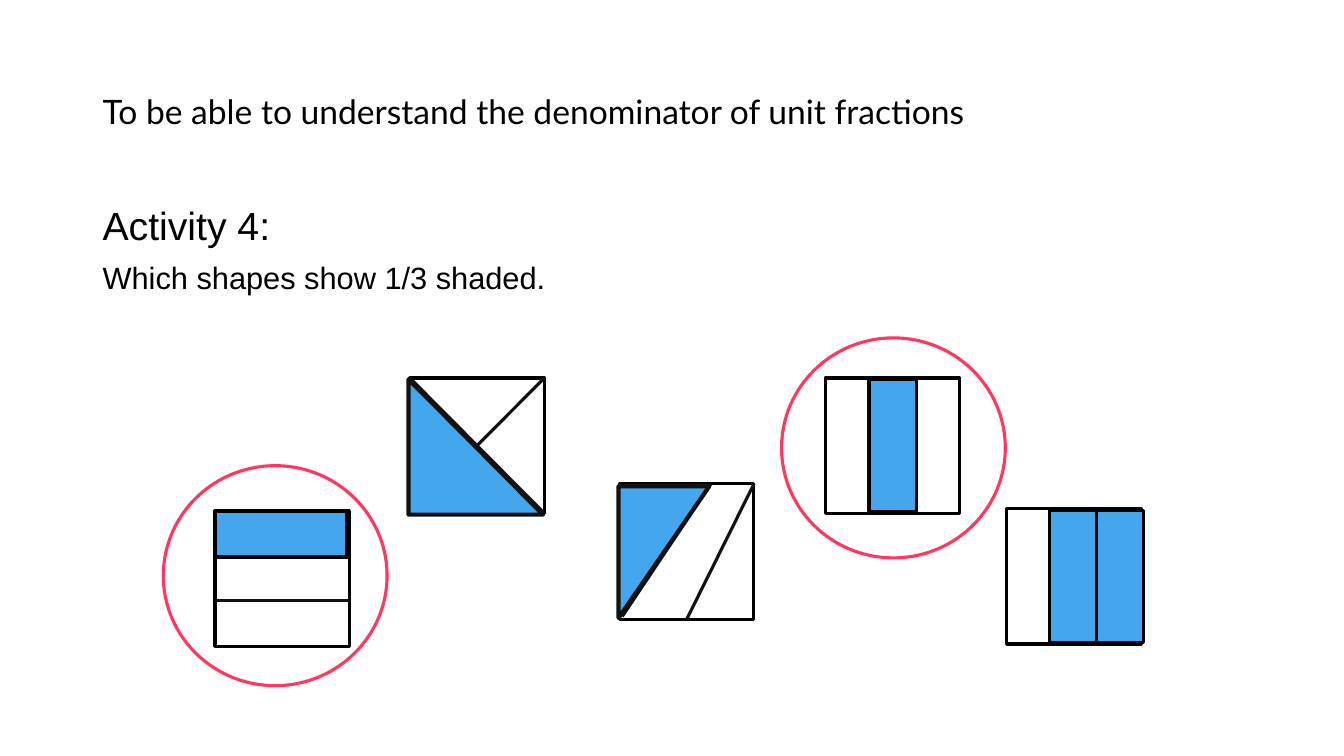
from lxml import etree
from pptx import Presentation
from pptx import util as u
from pptx.dml.color import RGBColor
from pptx.enum import shapes as s, text as t
from pptx.oxml.ns import qn

COLORS = {"black": "000000", "divider": "121212", "white": "FFFFFF",
          "shaded": "44A6ED", "answer": "FF3860"}

deck = Presentation()
deck.slide_width, deck.slide_height = u.Inches(13.33), u.Inches(7.5)
slide = deck.slides.add_slide(deck.slide_layouts[6])
COL, ROW = deck.slide_width / 100, deck.slide_height / 100  # one percent of the slide
SIDE_W, SIDE_H = 10 * COL, 17.9 * ROW                       # every square


def add_outline(kind, x, y, w, h, fill, line, weight):
    """Add an outlined shape; lengths in EMU, fill None for hollow."""
    outline = slide.shapes.add_shape(kind, int(x), int(y), int(w), int(h))
    outline.shadow.inherit = False
    if fill:
        outline.fill.solid()
        outline.fill.fore_color.rgb = RGBColor.from_string(COLORS[fill])
    else:
        outline.fill.background()
    outline.line.color.rgb = RGBColor.from_string(COLORS[line])
    outline.line.width = u.Pt(weight)
    return outline


def add_wording(x, y, w, h, anchor, lines):
    """Add a text box in percent of the slide; lines are (wording, size, font)."""
    box = slide.shapes.add_textbox(int(x * COL), int(y * ROW), int(w * COL), int(h * ROW))
    frame = box.text_frame
    frame.word_wrap = True
    frame.vertical_anchor = anchor
    frame.text = "\n".join(wording for wording, _, _ in lines)
    for i, (paragraph, (_, size, font)) in enumerate(zip(frame.paragraphs, lines)):
        paragraph.line_spacing = 0.9
        paragraph.space_before = u.Pt(10 if i else 0)
        face = paragraph.runs[0].font
        face.size, face.name = u.Pt(size), font
        face.color.rgb = RGBColor.from_string(COLORS["black"])


# Learning objective and question
add_wording(6.9, 5.33, 72, 19.33, t.MSO_ANCHOR.MIDDLE,
            [("To be able to understand the denominator of unit fractions", 24, "Lato")])
add_wording(6.9, 26.67, 86.3, 63.5, t.MSO_ANCHOR.TOP,
            [("Activity 4:", 28, "Arial"), ("Which shapes show 1/3 shaded.", 22, "Arial")])

# Squares: corner in percent of the slide; dividers (x1, y1, x2, y2) and
# shaded parts (kind, x, y, w, h, rotation) in shares of the square
STRIP, TRIANGLE = s.MSO_SHAPE.RECTANGLE, s.MSO_SHAPE.RIGHT_TRIANGLE
upright_thirds = [(0.32, 0, 0.32, 1), (0.67, 0, 0.67, 1)]
level_thirds = [(0, 0.34, 1, 0.34), (0, 0.66, 1, 0.66)]
left_middle = (STRIP, 0.33, 0.01, 0.35, 0.98, 0)
squares = [
    (61.4, 50, upright_thirds, [left_middle]),
    (30.5, 50, [(0, 0, 1, 1), (1, 0, 0.5, 0.5)], [(TRIANGLE, -0.01, 0.01, 1, 1, 0)]),
    (46.1, 64, [(1, 0, 0.5, 1), (0.68, 0, 0.02, 0.98)],
     [(TRIANGLE, -0.16, 0.17, 0.98, 0.67, 90)]),
    (16, 67.6, level_thirds, [(STRIP, 0, 0, 0.98, 0.34, 0)]),
    (74.9, 67.3, upright_thirds,
     [(STRIP, 0.67, 0.01, 0.35, 0.98, 0), (STRIP, 0.32, 0.01, 0.35, 0.98, 0)]),
]
for left, top, dividers, shaded_parts in squares:
    x, y = left * COL, top * ROW
    square = add_outline(STRIP, x, y, SIDE_W, SIDE_H, "white", "black", 2.25)
    for x1, y1, x2, y2 in dividers:
        divider = slide.shapes.add_connector(
            s.MSO_CONNECTOR.STRAIGHT, int(x + x1 * SIDE_W), int(y + y1 * SIDE_H),
            int(x + x2 * SIDE_W), int(y + y2 * SIDE_H))
        divider.line.color.rgb = RGBColor.from_string(COLORS["divider"])
        divider.line.width = u.Pt(2.25)
        etree.SubElement(divider._element.spPr, qn("a:effectLst"))
        if (x2, y2) == (0.5, 1):
            divider.end_connect(square, 2)
    for kind, dx, dy, w, h, rotation in shaded_parts:
        edge, weight = ("divider", 3) if kind == TRIANGLE else ("black", 2.25)
        part = add_outline(kind, x + dx * SIDE_W, y + dy * SIDE_H,
                           w * SIDE_W, h * SIDE_H, "shaded", edge, weight)
        part.rotation = rotation

# Rings around the correct answers
for left, top in [(58.15, 44.7), (12.15, 61.6)]:
    add_outline(s.MSO_SHAPE.OVAL, left * COL, top * ROW, 16.65 * COL, 29.1 * ROW,
                None, "answer", 2.25)

deck.save("out.pptx")
